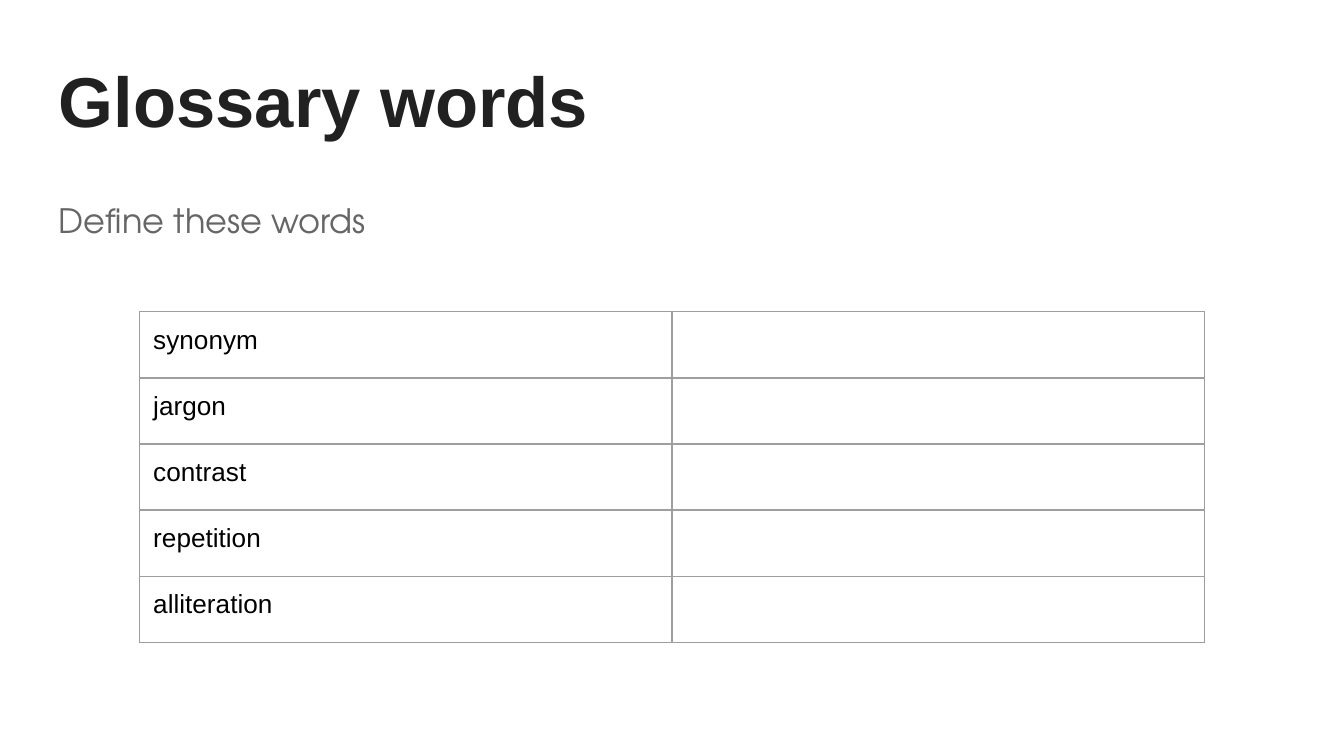
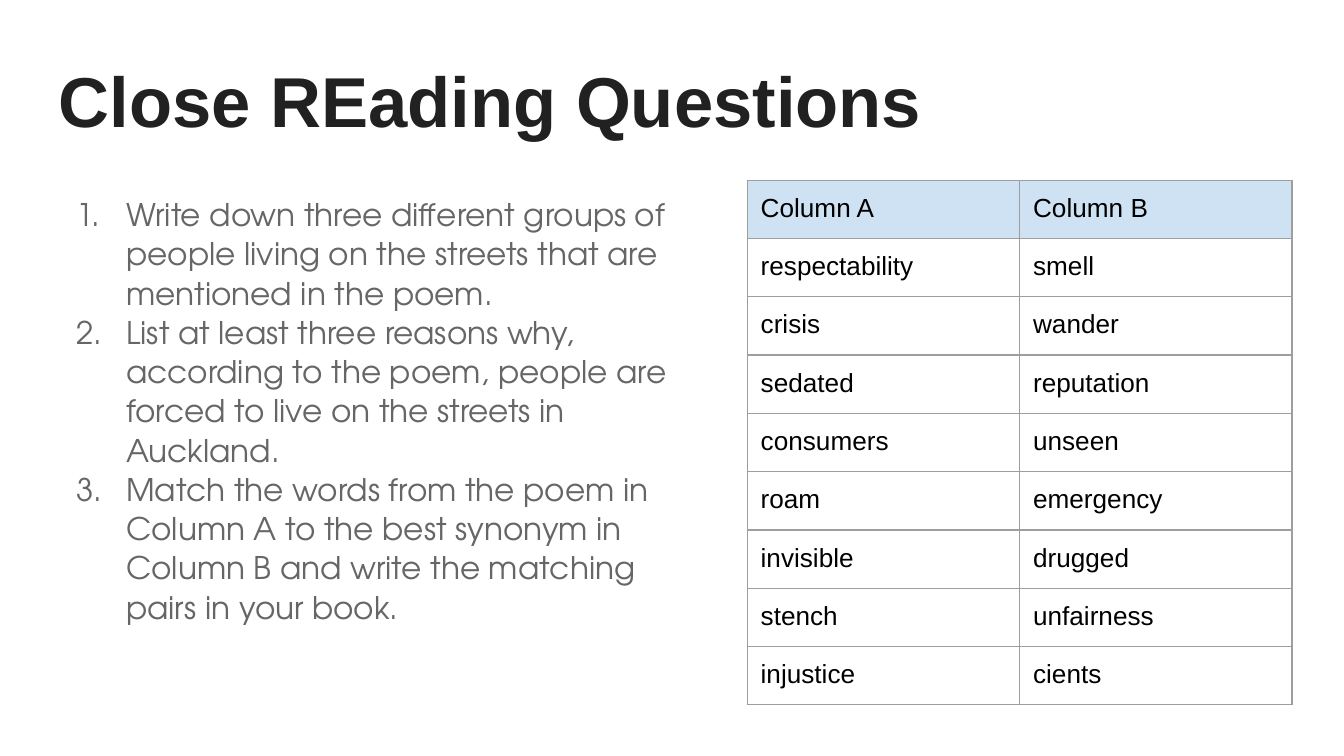
from dataclasses import dataclass

from lxml import etree
from pptx import Presentation
from pptx.dml.color import RGBColor
from pptx.enum.text import MSO_ANCHOR
from pptx.oxml.ns import qn
from pptx.util import Inches, Pt

TOP = MSO_ANCHOR.TOP
MIDDLE = MSO_ANCHOR.MIDDLE
UNIT = Inches(0.1)
COLS, ROWS = 100, 56.25
PAD = 1
LEFT, WIDE = 3.41, 93.18
BODY_TOP = 13.4
SIDES = ("lnL", "lnR", "lnT", "lnB")


@dataclass(frozen=True)
class Theme:
    ink: str = "212121"
    gray: str = "666666"
    black: str = "000000"
    rule: str = "9E9E9E"
    head: str = "CFE2F3"
    page: str = "FFFFFF"
    sans: str = "Arial"
    round: str = "TeX Gyre Adventor"
    title: float = 37.8
    lead: float = 18
    list: float = 16.7
    cell: float = 14
    blank: float = 17.5
    line: float = 0.75


THEME = Theme()
TITLE = {"name": THEME.sans, "size": Pt(THEME.title), "bold": True}
LEAD = {"name": THEME.round, "size": Pt(THEME.lead)}
LIST = {"name": THEME.round, "size": Pt(THEME.list)}
CELL = {"name": THEME.sans, "size": Pt(THEME.cell), "bold": False}

TERMS = ["synonym", "jargon", "contrast", "repetition", "alliteration"]
TASKS = [
    "Write down three different groups of people living on the streets "
    "that are mentioned in the poem.",
    "List at least three reasons why, according to the poem, people are "
    "forced to live on the streets in Auckland.",
    "Match the words from the poem in Column A to the best synonym in "
    "Column B and write the matching pairs in your book.",
]
PAIRS = [
    ("Column A", "Column B"),
    ("respectability", "smell"),
    ("crisis", "wander"),
    ("sedated", "reputation"),
    ("consumers", "unseen"),
    ("roam", "emergency"),
    ("invisible", "drugged"),
    ("stench", "unfairness"),
    ("injustice", "cients"),
]


def span(count):
    return int(count * UNIT)


def apply(item, form):
    for key, value in form.items():
        setattr(item, key, value)


def pad(item):
    apply(item, {f"margin_{side}": span(PAD)
                 for side in ("left", "top", "right", "bottom")})


def write(para, text, form, color):
    run = para.add_run()
    run.text = text
    apply(run.font, form)
    run.font.color.rgb = RGBColor.from_string(color)


def blank(para):
    props = etree.SubElement(para._p, qn("a:endParaRPr"),
                             sz=str(int(THEME.blank * 100)))
    etree.SubElement(props, qn("a:latin"), typeface=THEME.sans)


def add_text(slide, box, lines, form, color, space=1.0, anchor=TOP):
    frame = slide.shapes.add_textbox(*map(span, box)).text_frame
    apply(frame, {"word_wrap": True, "vertical_anchor": anchor})
    pad(frame)
    for index, line in enumerate(lines):
        para = frame.add_paragraph() if index else frame.paragraphs[0]
        para.line_spacing = space
        write(para, line, form, color)
    return frame


def number(frame, indent, hang):
    for para in frame.paragraphs:
        props = para._p.get_or_add_pPr()
        props.set("marL", str(span(indent)))
        props.set("indent", str(-span(hang)))
        tint = etree.SubElement(props, qn("a:buClr"))
        etree.SubElement(tint, qn("a:srgbClr"), val=THEME.gray)
        etree.SubElement(props, qn("a:buFont"), typeface=THEME.round)
        etree.SubElement(props, qn("a:buAutoNum"), type="arabicPeriod")


def edge(cell):
    props = cell._tc.get_or_add_tcPr()
    for side in SIDES:
        line = etree.SubElement(props, qn(f"a:{side}"), w=str(Pt(THEME.line)))
        fill = etree.SubElement(line, qn("a:solidFill"))
        etree.SubElement(fill, qn("a:srgbClr"), val=THEME.rule)


def add_grid(slide, box, data, head=False):
    left, top, width, height = map(span, box)
    rows, cols = len(data), len(data[0])
    table = slide.shapes.add_table(rows, cols, left, top, width, height).table
    apply(table, {"first_row": head, "horz_banding": False})
    for r, words in enumerate(data):
        for c, word in enumerate(words):
            cell = table.cell(r, c)
            pad(cell)
            edge(cell)
            if head and r == 0:
                cell.fill.solid()
                cell.fill.fore_color.rgb = RGBColor.from_string(THEME.head)
            else:
                cell.fill.background()
            para = cell.text_frame.paragraphs[0]
            if word:
                write(para, word, CELL, THEME.black)
            else:
                blank(para)


def add_page(deck, title):
    slide = deck.slides.add_slide(deck.slide_layouts[6])
    fill = slide.background.fill
    fill.solid()
    fill.fore_color.rgb = RGBColor.from_string(THEME.page)
    add_text(slide, (LEFT, 3, WIDE, 8.8), [title], TITLE, THEME.ink,
             anchor=MIDDLE)
    return slide


def add_terms(deck):
    slide = add_page(deck, "Glossary words")
    add_text(slide, (LEFT, BODY_TOP, WIDE, 36.5), ["Define these words"],
             LEAD, THEME.gray, 1.15)
    data = [(term, "") for term in TERMS]
    add_grid(slide, (10.4, 23.2, 2 * 39.6, 4.2 * len(data)), data)


def add_tasks(deck):
    slide = add_page(deck, "Close REading Questions")
    frame = add_text(slide, (LEFT, BODY_TOP, 47.4, 40.4), TASKS,
                     LIST, THEME.gray, 1.05)
    number(frame, 5, 3.7)
    add_grid(slide, (55.6, BODY_TOP, 2 * 20.27, 4.33 * len(PAIRS)), PAIRS,
             head=True)


def main():
    deck = Presentation()
    apply(deck, {"slide_width": span(COLS), "slide_height": span(ROWS)})
    add_terms(deck)
    add_tasks(deck)
    deck.save("out.pptx")


if __name__ == "__main__":
    main()
